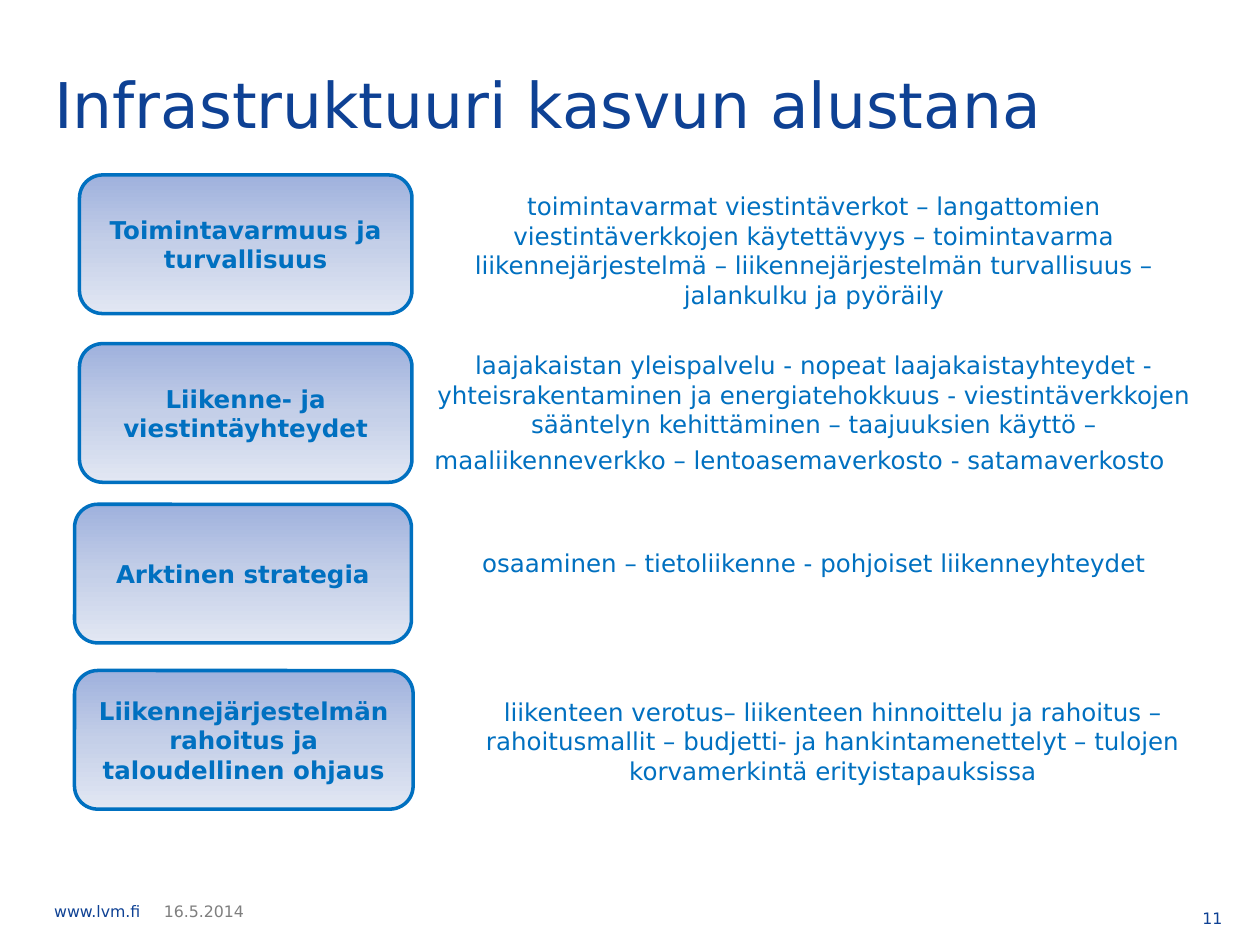
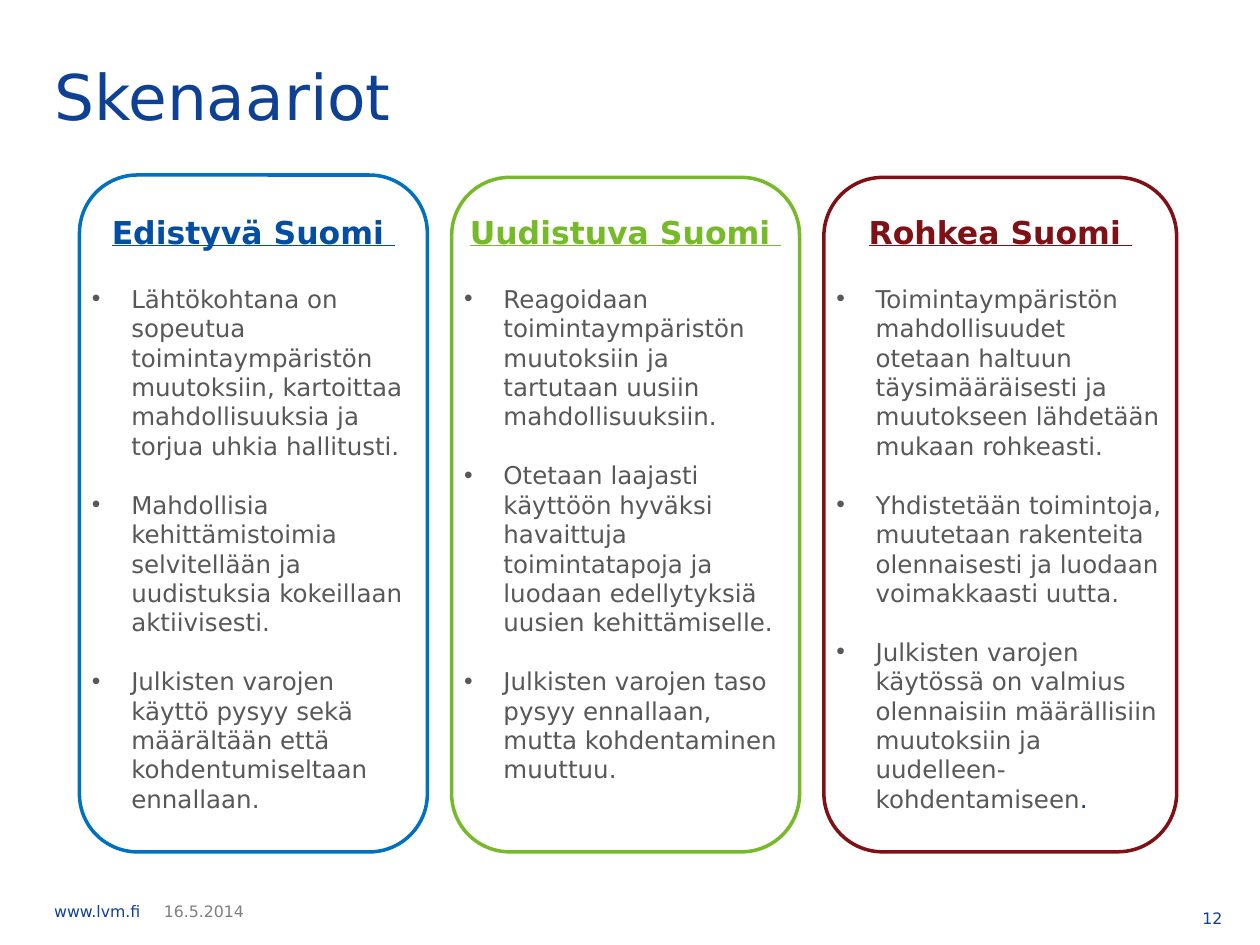
from lxml.etree import SubElement
from pptx import Presentation
from pptx.dml.color import RGBColor
from pptx.enum.shapes import MSO_SHAPE
from pptx.enum.text import MSO_ANCHOR, PP_ALIGN
from pptx.oxml.ns import qn
from pptx.util import Pt

FONT = "DejaVu Sans"
COLORS = {
    "navy": "0E4194",
    "blue": "0070C0",
    "heading_blue": "034EA2",
    "green": "76BA29",
    "red": "7F1116",
    "body": "585858",
    "date": "7F7F7F",
    "white": "FFFFFF",
}
THEME_GRADIENT = [(0, "9FB1DD"), (50, "C4CFE8"), (100, "E2E7F3")]
STANDARD_INSETS = (7.2, 3.6)
BULLET_INDENT = 22.5

THEME_HEIGHT = 79.2
THEMES = [
    ("Toimintavarmuus ja turvallisuus", (45.4, 100, 190)),
    ("Liikenne- ja viestintäyhteydet", (45.4, 196.4, 190)),
    ("Arktinen strategia", (42.6, 288.2, 192.5)),
    ("Liikennejärjestelmän rahoitus ja taloudellinen ohjaus", (42.6, 383.2, 193.5)),
]
DESCRIPTIONS = [
    (["toimintavarmat viestintäverkot – langattomien viestintäverkkojen käytettävyys – "
      "toimintavarma liikennejärjestelmä – liikennejärjestelmän turvallisuus – "
      "jalankulku ja pyöräily"], (241.2, 105.8, 448, 80)),
    (["laajakaistan yleispalvelu - nopeat laajakaistayhteydet - yhteisrakentaminen ja "
      "energiatehokkuus - viestintäverkkojen sääntelyn kehittäminen – taajuuksien käyttö –",
      "maaliikenneverkko – lentoasemaverkosto - satamaverkosto"], (241.2, 196.6, 448, 78.5)),
    (["osaaminen – tietoliikenne - pohjoiset liikenneyhteydet"], (241.2, 309.6, 448, 33.8)),
    (["liikenteen verotus– liikenteen hinnoittelu ja rahoitus – rahoitusmallit – budjetti- ja "
      "hankintamenettelyt – tulojen korvamerkintä erityistapauksissa"], (252, 394.6, 448, 67.7)),
]

SCENARIO_LEFT, SCENARIO_PITCH, SCENARIO_BOTTOM = 45.4, 212.7, 486.8
SCENARIOS = [
    ("Edistyvä Suomi ", "blue", "heading_blue", 100, 198.8, [
        "Lähtökohtana on sopeutua toimintaympäristön muutoksiin, kartoittaa mahdollisuuksia "
        "ja torjua uhkia hallitusti.",
        "Mahdollisia kehittämistoimia selvitellään ja uudistuksia kokeillaan aktiivisesti.",
        "Julkisten varojen käyttö pysyy sekä määrältään että kohdentumiseltaan ennallaan.",
    ]),
    ("Uudistuva Suomi ", "green", "green", 101.4, 198.8, [
        "Reagoidaan toimintaympäristön muutoksiin ja tartutaan uusiin mahdollisuuksiin.",
        "Otetaan laajasti käyttöön hyväksi havaittuja toimintatapoja ja luodaan edellytyksiä "
        "uusien kehittämiselle.",
        "Julkisten varojen taso pysyy ennallaan, mutta kohdentaminen muuttuu.",
    ]),
    ("Rohkea Suomi ", "red", "red", 101.4, 201.6, [
        "Toimintaympäristön mahdollisuudet \votetaan haltuun täysimääräisesti ja muutokseen "
        "lähdetään mukaan rohkeasti.",
        "Yhdistetään toimintoja, muutetaan rakenteita olennaisesti ja luodaan voimakkaasti uutta.",
        "Julkisten varojen käytössä on valmius olennaisiin määrällisiin muutoksiin ja "
        "uudelleen-kohdentamiseen",
    ]),
]


def rgb(name):
    return RGBColor.from_string(COLORS[name])


def add_text(frame, text, size=14, color="blue", bold=False, underline=False,
             align=PP_ALIGN.LEFT, space_before=0, bullet=False):
    first = not frame.paragraphs[0].runs
    paragraph = frame.paragraphs[0] if first else frame.add_paragraph()
    if bullet:
        properties = paragraph._p.get_or_add_pPr()
        properties.set("marL", str(Pt(BULLET_INDENT)))
        properties.set("indent", str(-Pt(BULLET_INDENT)))
        SubElement(properties, qn("a:buFont")).set("typeface", "Arial")
        SubElement(properties, qn("a:buChar")).set("char", "•")
    paragraph.alignment = align
    if space_before:
        paragraph.space_before = Pt(space_before)
    paragraph.text = text
    for run in paragraph.runs:
        format_font(run.font, size, color, bold, underline)
    return paragraph


def format_font(font, size, color, bold=False, underline=False):
    font.name = FONT
    font.size = Pt(size)
    font.bold = bold
    font.underline = underline
    font.color.rgb = rgb(color)


def set_frame(frame, insets, anchor=MSO_ANCHOR.TOP, wrap=True):
    frame.word_wrap = wrap
    frame.vertical_anchor = anchor
    frame.margin_left = frame.margin_right = Pt(insets[0])
    frame.margin_top = frame.margin_bottom = Pt(insets[1])
    return frame


def add_box(slide, left, top, width, height, insets=(0, 0), **layout):
    shape = slide.shapes.add_textbox(Pt(left), Pt(top), Pt(width), Pt(height))
    return set_frame(shape.text_frame, insets, **layout)


def add_rounded_box(slide, left, top, width, height, line_color):
    shape = slide.shapes.add_shape(MSO_SHAPE.ROUNDED_RECTANGLE,
                                   Pt(left), Pt(top), Pt(width), Pt(height))
    shape.shadow.inherit = False
    shape.fill.solid()
    shape.fill.fore_color.rgb = rgb("white")
    shape.line.color.rgb = rgb(line_color)
    shape.line.width = Pt(2)
    return shape


def fill_gradient(shape, stops):
    shape.fill.gradient()
    shape.fill.gradient_angle = 270
    stop_list = shape._element.spPr.find(".//" + qn("a:gsLst"))
    for stop in list(stop_list):
        stop_list.remove(stop)
    for position, color in stops:
        stop = SubElement(stop_list, qn("a:gs"), pos=str(position * 1000))
        SubElement(stop, qn("a:srgbClr"), val=color)


def add_slide(presentation, title, title_top, number):
    slide = presentation.slides.add_slide(presentation.slide_layouts[6])
    add_text(add_box(slide, 93.6, 515.5, 90.7, 21.6, wrap=False), "16.5.2014", size=9, color="date")
    add_text(add_box(slide, 31, 515.5, 62.6, 10.8), "www.lvm.fi", size=9, color="navy")
    add_text(add_box(slide, 31, title_top, 648, 67.7, anchor=MSO_ANCHOR.MIDDLE),
             title, size=36, color="navy")
    add_text(add_box(slide, 632.2, 515.5, 73.4, 21.6, STANDARD_INSETS), number,
             size=9, color="navy", align=PP_ALIGN.RIGHT)
    return slide


def add_theme(slide, name, left, top, width):
    shape = add_rounded_box(slide, left, top, width, THEME_HEIGHT, "blue")
    fill_gradient(shape, THEME_GRADIENT)
    frame = set_frame(shape.text_frame, STANDARD_INSETS, MSO_ANCHOR.MIDDLE)
    add_text(frame, name, bold=True, align=PP_ALIGN.CENTER)


def add_description(slide, paragraphs, place):
    frame = add_box(slide, *place, STANDARD_INSETS)
    add_text(frame, paragraphs[0], align=PP_ALIGN.CENTER)
    for text in paragraphs[1:]:
        add_text(frame, text, space_before=3.7)


def add_scenario(slide, left, name, line_color, heading_color, top, width, points):
    add_rounded_box(slide, left, top, width, SCENARIO_BOTTOM - top, line_color)
    frame = add_box(slide, left, 118, width, 351, STANDARD_INSETS)
    add_text(frame, name, size=18, color=heading_color, bold=True, underline=True,
             align=PP_ALIGN.CENTER)
    for index, point in enumerate(points):
        paragraph = add_text(frame, point, color="body", bullet=True,
                             space_before=16.8 if index else 19)
    return paragraph


def main():
    presentation = Presentation()
    presentation.slide_width, presentation.slide_height = Pt(720), Pt(540)

    slide = add_slide(presentation, "Infrastruktuuri kasvun alustana", 25.2, "11")
    for name, place in THEMES:
        add_theme(slide, name, *place)
    for paragraphs, place in DESCRIPTIONS:
        add_description(slide, paragraphs, place)

    slide = add_slide(presentation, "Skenaariot", 20.9, "12")
    for column, scenario in enumerate(SCENARIOS):
        last_paragraph = add_scenario(slide, SCENARIO_LEFT + column * SCENARIO_PITCH, *scenario)
    full_stop = last_paragraph.add_run()
    full_stop.text = "."
    format_font(full_stop.font, 14, "navy")

    presentation.save("out.pptx")


if __name__ == "__main__":
    main()
